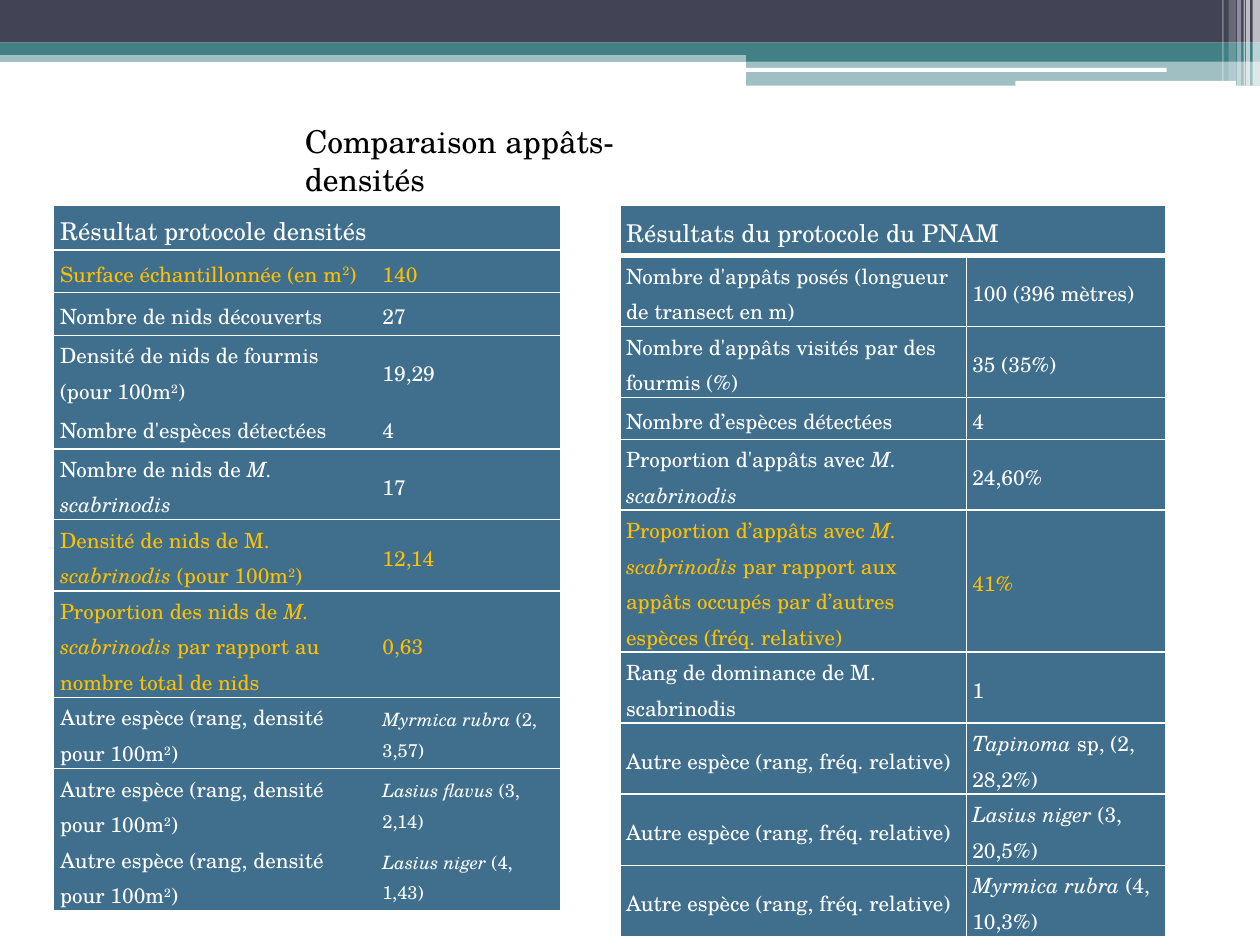
"""Build the slide that compares the bait and nest density protocols."""
import lxml.etree
import pptx
import pptx.dml.color
import pptx.enum.shapes
import pptx.enum.text
import pptx.oxml.ns
import pptx.util

Cm, Pt = pptx.util.Cm, pptx.util.Pt
FONT = "TeX Gyre Schola"
WHITE, BLACK, GOLD = "FFFFFF", "000000", "FFC000"
TEAL, SLATE, BLUE = "438086", "424456", "406F8D"

# left, top, width, height, colour, opacity in percent
BANDS = [
    (0, 1.02, 25.4, 0.23, TEAL, 50),
    (0, 0, 25.4, 0.86, SLATE, 100),
    (0, 0.86, 25.4, 0.25, TEAL, 100),
    (15.04, 0.99, 10.36, 0.25, TEAL, 100),
    (15.04, 1.22, 10.36, 0.51, TEAL, 50),
]
RULES = [(15.01, 1.37, 8.51, 0.08), (20.47, 1.63, 4.45, 0.1)]
# left, width, height, opacity in percent
STRIPES = [
    (25.25, 0.15, 1.73, 65),
    (25.12, 0.08, 1.73, 65),
    (25.07, 0.03, 1.73, 60),
    (24.94, 0.08, 1.73, 40),
    (24.77, 0.15, 1.63, 20),
    (24.64, 0.03, 1.63, 30),
]

# height, label, value, colour, value size; *italic* and ^superscript^
OTHER_DENSITY = "Autre espèce (rang, densité pour 100m^2^)"
DENSITY_ROWS = [
    (0.91, "Résultat protocole densités", "", WHITE, 14),
    (0.86, "Surface échantillonnée (en m^2^)", "140", GOLD, 12),
    (0.86, "Nombre de nids découverts", "27", WHITE, 12),
    (1.27, "Densité de nids de fourmis (pour 100m^2^)", "19,29", WHITE, 12),
    (0.86, "Nombre d'espèces détectées", "4", WHITE, 12),
    (0.86, "Nombre de nids de *M. scabrinodis*", "17", WHITE, 12),
    (1.27, "Densité de nids de M. *scabrinodis* (pour 100m^2^)", "12,14", GOLD, 12),
    (1.27, "Proportion des nids de *M. scabrinodis *par rapport au nombre total de nids",
     "0,63", GOLD, 12),
    (1.27, OTHER_DENSITY, "*Myrmica rubra *(2, 3,57)", WHITE, 10.5),
    (1.27, OTHER_DENSITY, "*Lasius flavus *(3, 2,14)", WHITE, 10.5),
    (1.27, OTHER_DENSITY, "*Lasius niger *(4, 1,43)", WHITE, 10.5),
]
OTHER_BAIT = "Autre espèce (rang, fréq. relative)"
BAIT_ROWS = [
    (1.02, "Résultats du protocole du PNAM", "", WHITE, 14),
    (1.19, "Nombre d'appâts posés (longueur de transect en m)", "100 (396 mètres)", WHITE, 12),
    (1.19, "Nombre d'appâts visités par des fourmis (%)", "35 (35%)", WHITE, 12),
    (0.84, "Nombre d’espèces détectées", "4", WHITE, 12),
    (1.19, "Proportion d'appâts avec *M. scabrinodis*", "24,60%", WHITE, 12),
    (2.41, "Proportion d’appâts avec *M. scabrinodis* par rapport aux appâts occupés"
     " par d’autres espèces (fréq. relative)", "41%", GOLD, 12),
    (1.19, "Rang de dominance de M. scabrinodis", "1", WHITE, 12),
    (1.19, OTHER_BAIT, "*Tapinoma *sp, (2, 28,2%)", WHITE, 12),
    (1.19, OTHER_BAIT, "*Lasius niger *(3, 20,5%)", WHITE, 12),
    (1.19, OTHER_BAIT, "*Myrmica rubra *(4, 10,3%)", WHITE, 12),
]


def rgb(colour):
    """Turn a hex string into a colour value."""
    return pptx.dml.color.RGBColor.from_string(colour)


def add_child(parent, tag, **attributes):
    """Append a DrawingML element to its parent."""
    return lxml.etree.SubElement(parent, pptx.oxml.ns.qn(tag), attributes)


def add_bar(slide, left, top, width, height, colour, opacity=100, rounded=False):
    """Draw one flat bar of the header band."""
    kinds = pptx.enum.shapes.MSO_SHAPE
    kind = kinds.ROUNDED_RECTANGLE if rounded else kinds.RECTANGLE
    bar = slide.shapes.add_shape(kind, Cm(left), Cm(top), Cm(width), Cm(height))
    bar.shadow.inherit = False
    bar.line.fill.background()
    bar.fill.solid()
    bar.fill.fore_color.rgb = rgb(colour)
    if opacity < 100:
        tint = bar.fill._xPr.find(".//" + pptx.oxml.ns.qn("a:srgbClr"))
        add_child(tint, "a:alpha", val=str(opacity * 1000))


def set_font(paragraph, size, colour):
    """Give a paragraph its typeface, size and colour."""
    paragraph.font.name = FONT
    paragraph.font.size = Pt(size)
    paragraph.font.color.rgb = rgb(colour)


def add_marked_text(paragraph, text):
    """Write text in which *...* is italic and ^...^ is superscript."""
    for i, phrase in enumerate(text.split("*")):
        for j, piece in enumerate(phrase.split("^")):
            if piece:
                run = paragraph.add_run()
                run.text = piece
                if i % 2:
                    run.font.italic = True
                if j % 2:
                    run.font._element.set("baseline", "30000")


def set_borders(cell, **widths):
    """Draw white cell borders, where a width of zero means no line."""
    properties = cell._tc.get_or_add_tcPr()
    for side in "LRTB":
        width = widths[side]
        line = add_child(properties, f"a:ln{side}", w=str(Pt(width)))
        if width:
            add_child(add_child(line, "a:solidFill"), "a:srgbClr", val=WHITE)
        else:
            add_child(line, "a:noFill")


def fill_cell(cell, text, size, colour):
    """Fill one table cell and write its text."""
    cell.fill.solid()
    cell.fill.fore_color.rgb = rgb(BLUE)
    cell.vertical_anchor = pptx.enum.text.MSO_ANCHOR.MIDDLE
    cell.margin_left = cell.margin_right = Cm(0.12)
    cell.margin_top = cell.margin_bottom = 0
    paragraph = cell.text_frame.paragraphs[0]
    paragraph.line_spacing = 1.15
    set_font(paragraph, size, colour)
    add_marked_text(paragraph, text)


def add_results(slide, left, column_widths, rows, rule_widths, side_width):
    """Add a results table, with one rule width for each row edge."""
    height = sum(row[0] for row in rows)
    table = slide.shapes.add_table(len(rows), 2, Cm(left), Cm(4.13),
                                   Cm(sum(column_widths)), Cm(height)).table
    table.horz_banding = table.first_row = False
    for column, width in zip(table.columns, column_widths):
        column.width = Cm(width)
    for i, (row_height, label, value, colour, value_size) in enumerate(rows):
        table.rows[i].height = Cm(row_height)
        label_size = max(value_size, 12)
        for j, (text, size) in enumerate([(label, label_size), (value, value_size)]):
            cell = table.cell(i, j)
            set_borders(cell, L=side_width, R=side_width,
                        T=rule_widths[i], B=rule_widths[i + 1])
            fill_cell(cell, text, size, colour)
    return table


def add_title(slide, text):
    """Place and format the slide title."""
    title = slide.shapes.title
    title.left, title.top, title.width, title.height = Cm(5.89), Cm(2.34), Cm(8.92), Cm(1.02)
    frame = title.text_frame
    frame.text = text
    frame.word_wrap = True
    frame.auto_size = pptx.enum.text.MSO_AUTO_SIZE.NONE
    frame.vertical_anchor = pptx.enum.text.MSO_ANCHOR.TOP
    frame.paragraphs[0].alignment = pptx.enum.text.PP_ALIGN.LEFT
    set_font(frame.paragraphs[0], 18, BLACK)


def main():
    """Build and save the presentation."""
    deck = pptx.Presentation()
    deck.slide_width, deck.slide_height = Cm(25.4), Cm(19.05)
    slide = deck.slides.add_slide(deck.slide_layouts[5])
    for band in BANDS:
        add_bar(slide, *band)
    for rule in RULES:
        add_bar(slide, *rule, WHITE, rounded=True)
    for left, width, height, opacity in STRIPES:
        add_bar(slide, left, 0, width, height, WHITE, opacity)

    density_rules = [0 if i in (4, 10) else 1 for i in range(len(DENSITY_ROWS) + 1)]
    add_results(slide, 1.09, (6.5, 3.7), DENSITY_ROWS, density_rules, 0)
    bait_rules = [1, 3] + [1] * (len(BAIT_ROWS) - 1)
    baits = add_results(slide, 12.5, (6.98, 4.02), BAIT_ROWS, bait_rules, 1)
    baits.cell(0, 0).merge(baits.cell(0, 1))
    add_title(slide, "Comparaison appâts-densités")
    deck.save("out.pptx")


if __name__ == "__main__":
    main()
